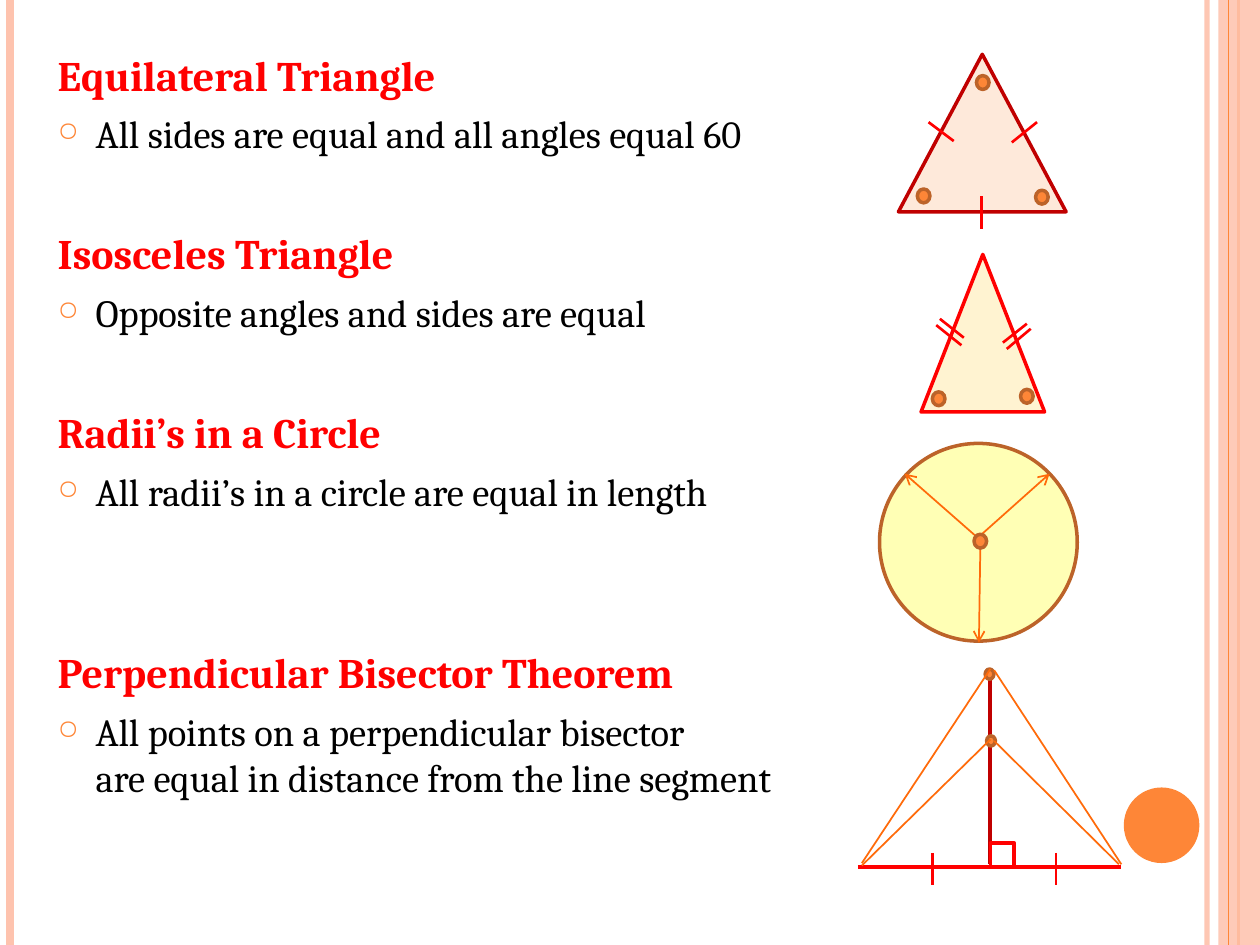
from dataclasses import dataclass

from lxml import etree
from pptx import Presentation
from pptx.dml.color import RGBColor
from pptx.enum.shapes import MSO_CONNECTOR, MSO_SHAPE
from pptx.enum.text import MSO_ANCHOR, MSO_AUTO_SIZE, PP_ALIGN
from pptx.oxml.ns import qn
from pptx.util import Pt

STRAIGHT = MSO_CONNECTOR.STRAIGHT
ELLIPSE = MSO_SHAPE.OVAL
RECTANGLE = MSO_SHAPE.RECTANGLE
TRIANGLE = MSO_SHAPE.ISOSCELES_TRIANGLE
TOP = MSO_ANCHOR.TOP
LEFT = PP_ALIGN.LEFT
NO_AUTOFIT = MSO_AUTO_SIZE.NONE

WIDTH, HEIGHT = 720, 540


@dataclass(frozen=True)
class Theme:
    font: str = "Cambria"
    heading_size: float = 24
    body_size: float = 22
    red: str = "FF0000"
    dark_red: str = "C00000"
    black: str = "000000"
    orange: str = "FE8637"
    bright_orange: str = "FF6B0A"
    brown: str = "BC6329"
    peach: str = "FEC3AE"
    gold: str = "FFC000"
    yellow: str = "FFFF00"


def set_attributes(target, values):
    for name, value in values.items():
        setattr(target, name, value)


def add_element(parent, tag, **attributes):
    return etree.SubElement(parent, qn(tag), attributes)


class GeometrySlide:
    def __init__(self, presentation, theme):
        self.theme = theme
        self.slide = presentation.slides.add_slide(presentation.slide_layouts[6])

    def paint(self, fill, color, opacity=100):
        fill.solid()
        fill.fore_color.rgb = RGBColor.from_string(color)
        if opacity < 100:
            color_element = fill._xPr.find(qn("a:solidFill"))[0]
            add_element(color_element, "a:alpha", val=str(opacity * 1000))

    def line(self, start_x, start_y, end_x, end_y, color, width, opacity=100, arrow=False):
        connector = self.slide.shapes.add_connector(
            STRAIGHT, Pt(start_x), Pt(start_y), Pt(end_x), Pt(end_y))
        self.paint(connector.line.fill, color, opacity)
        connector.line.width = Pt(width)
        if arrow:
            add_element(connector.line._get_or_add_ln(), "a:tailEnd", type="arrow")
        add_element(connector._element.spPr, "a:effectLst")

    def shape(self, kind, left, top, width, height, fill=None, opacity=100, outline=None):
        shape = self.slide.shapes.add_shape(kind, Pt(left), Pt(top), Pt(width), Pt(height))
        shape.shadow.inherit = False
        if fill:
            self.paint(shape.fill, fill, opacity)
        else:
            shape.fill.background()
        if outline:
            self.paint(shape.line.fill, outline)
            shape.line.width = Pt(2)
        else:
            shape.line.fill.background()

    def dot(self, left, top, width=7.2, height=7.9):
        self.shape(ELLIPSE, left, top, width, height, self.theme.orange, outline=self.theme.brown)

    def tick(self, *ends):
        self.line(*ends, self.theme.red, 1.5)

    def add_bullet(self, paragraph):
        properties = paragraph._p.get_or_add_pPr()
        color = add_element(properties, "a:buClr")
        add_element(color, "a:srgbClr", val=self.theme.orange)
        add_element(properties, "a:buSzPct", val="70000")
        add_element(properties, "a:buChar", char="○")

    def paragraph(self, paragraph, text, space_before, is_heading):
        theme = self.theme
        set_attributes(paragraph, {"alignment": LEFT, "space_before": Pt(space_before)})
        properties = paragraph._p.get_or_add_pPr()
        properties.set("marL", str(Pt(21.6)))
        properties.set("indent", str(-Pt(21.6)))
        if not is_heading:
            self.add_bullet(paragraph)
        paragraph.text = text
        size, color = ((theme.heading_size, theme.red) if is_heading
                       else (theme.body_size, theme.black))
        for run in paragraph.runs:
            set_attributes(run.font, {"name": theme.font, "size": Pt(size), "bold": is_heading})
            run.font.color.rgb = RGBColor.from_string(color)

    def facts(self, left, top, width, height, entries):
        box = self.slide.shapes.add_textbox(Pt(left), Pt(top), Pt(width), Pt(height))
        frame = box.text_frame
        set_attributes(frame, {"word_wrap": True, "auto_size": NO_AUTOFIT,
                               "vertical_anchor": TOP})
        for index, (space_before, heading, body) in enumerate(entries):
            first = frame.add_paragraph() if index else frame.paragraphs[0]
            self.paragraph(first, heading, space_before, True)
            self.paragraph(frame.add_paragraph(), body, 6, False)


def draw_border(page, theme):
    page.line(689.8, 0, 689.8, HEIGHT, theme.peach, 3, opacity=93)
    page.line(5.8, 0, 5.8, HEIGHT, theme.peach, 4.5)
    page.line(707.8, 0, 707.8, HEIGHT, theme.orange, 1.5)
    page.shape(RECTANGLE, 696.2, 0, WIDTH - 696.2, HEIGHT, theme.peach, 87)
    page.line(702, 0, 702, HEIGHT, theme.orange, 0.75)
    page.shape(ELLIPSE, 642.2, 450, 43.2, 43.2, theme.orange)


def draw_triangles(page, theme):
    page.shape(TRIANGLE, 513.4, 31, 95.8, 90, theme.orange, 18, theme.dark_red)
    for ends in ((592.6, 69.8, 578.2, 81.4), (530.6, 69.8, 545, 80.6),
                 (560.9, 112.3, 560.9, 131)):
        page.tick(*ends)
    for corner in ((524.2, 108), (591.8, 108.7), (558, 43.2)):
        page.dot(*corner)

    page.shape(TRIANGLE, 526.3, 145.4, 70.6, 90, theme.gold, 18, theme.red)
    for ends in ((586.8, 185, 573.1, 195.8), (537.1, 182.2, 550.8, 193),
                 (589, 187.9, 575.3, 199.4), (535, 185.8, 549.4, 197.3)):
        page.tick(*ends)
    for corner in ((532.8, 223.9), (583.2, 222.5)):
        page.dot(*corner)


def draw_circle(page, theme):
    page.shape(ELLIPSE, 502.6, 253.4, 113, 113, theme.yellow, 29, theme.brown)
    for radius in ((560.2, 306, 599.8, 270.7), (560.2, 313.2, 559.4, 367.2),
                   (558, 306.7, 517, 270.7)):
        page.line(*radius, theme.bright_orange, 1, arrow=True)
    page.dot(556.6, 305.3)


def draw_bisector(page, theme):
    page.line(490.3, 495.4, 640.8, 495.4, theme.red, 2.25)
    page.line(565.9, 493.9, 565.9, 383.8, theme.dark_red, 2.25)
    page.shape(RECTANGLE, 565.9, 481.7, 13.7, 13.7, outline=theme.red)
    for point in ((563, 382.3), (563.8, 420.5)):
        page.dot(*point, 5, 5.8)
    for side in ((565.9, 382.3, 492.5, 493.2), (568.1, 383, 640.8, 493.9),
                 (565.9, 422.6, 492.5, 494.6), (568.1, 423.4, 639.4, 493.9)):
        page.line(*side, theme.bright_orange, 1)
    for x in (532.8, 603.4):
        page.tick(x, 487.4, x, 505.8)


def main():
    presentation = Presentation()
    set_attributes(presentation, {"slide_width": Pt(WIDTH), "slide_height": Pt(HEIGHT)})
    theme = Theme()
    page = GeometrySlide(presentation, theme)
    draw_border(page, theme)
    page.facts(25.9, 24.5, 430.6, 493.2, (
        (0, "Equilateral Triangle", "All sides are equal and all angles equal 60"),
        (41, "Isosceles Triangle", "Opposite angles and sides are equal"),
        (41, "Radii’s in a Circle", "All radii’s in a circle are equal in length"),
        (76, "Perpendicular Bisector Theorem",
         "All points on a perpendicular bisector\vare equal in distance from the line segment"),
    ))
    draw_triangles(page, theme)
    draw_circle(page, theme)
    draw_bisector(page, theme)
    presentation.save("out.pptx")


if __name__ == "__main__":
    main()
